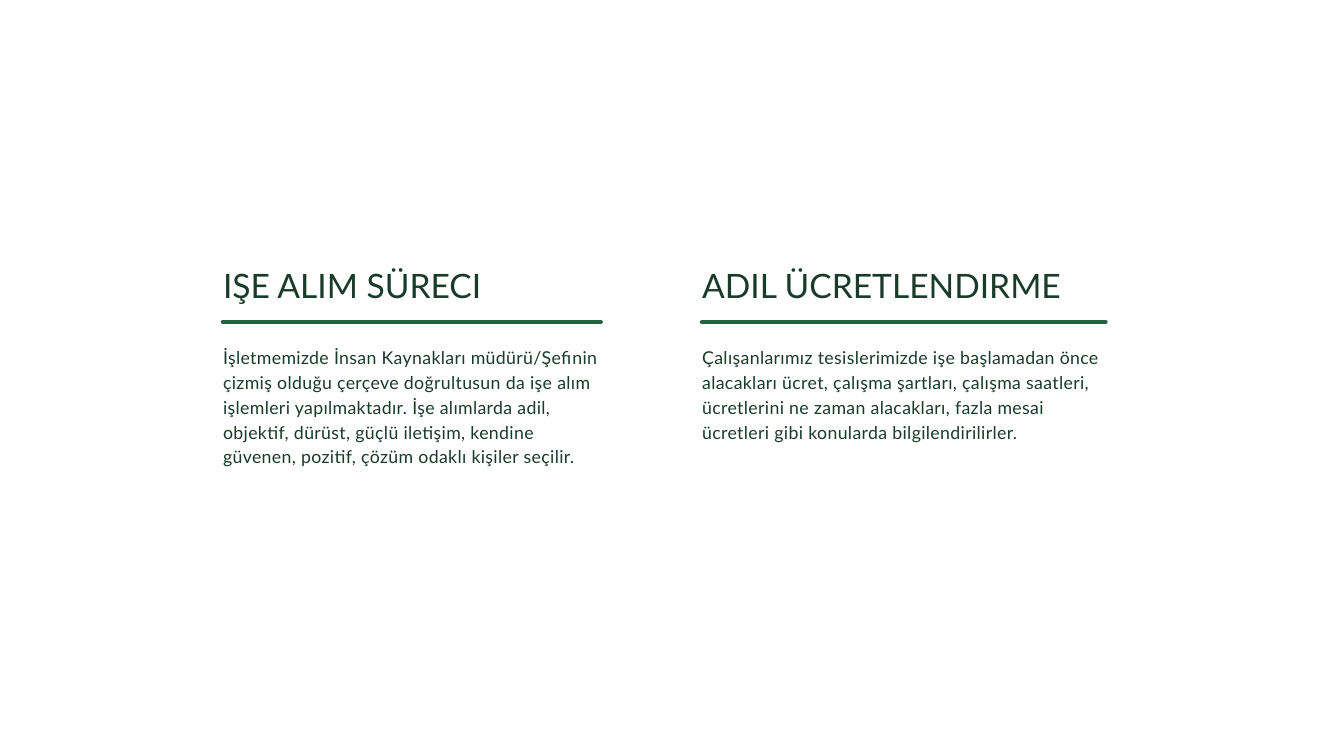
from lxml import etree
from pptx import Presentation
from pptx import util as u
from pptx.dml.color import RGBColor
from pptx.enum import shapes, text
from pptx.oxml import ns

INK = RGBColor(0x1A, 0x3B, 0x29)
GREEN = RGBColor(0x26, 0x60, 0x41)

HEADING_TOP, HEADING_HEIGHT = 9.75, 1.65
RULE_TOP = 12.17
BODY_TOP = 12.98

HEADING = {"size": 36, "line": 50.4, "spacing": 0}
BODY = {"size": 19, "line": 26.6, "spacing": 0.4}

COLUMNS = [
    {
        "left": 8.43, "width": 14.27, "body_height": 7.37,
        "heading": "IŞE ALIM SÜRECI",
        "body": "İşletmemizde İnsan Kaynakları müdürü/Şefinin çizmiş olduğu "
                "çerçeve doğrultusun da işe alım işlemleri yapılmaktadır. "
                "İşe alımlarda adil, objektif, dürüst, güçlü iletişim, kendine "
                "güvenen, pozitif, çözüm odaklı kişiler seçilir.",
    },
    {
        "left": 26.54, "width": 15.24, "body_height": 5.51,
        "heading": "ADIL ÜCRETLENDIRME",
        "body": "Çalışanlarımız tesislerimizde işe başlamadan önce alacakları "
                "ücret, çalışma şartları, çalışma saatleri, ücretlerini ne "
                "zaman alacakları, fazla mesai ücretleri gibi konularda "
                "bilgilendirilirler.",
    },
]


def set_attrs(obj, values):
    for name, value in values.items():
        setattr(obj, name, value)


def fill_placeholder(sp, box, content, style):
    left, top, width, height = (u.Cm(v) for v in box)
    set_attrs(sp, {"left": left, "top": top, "width": width, "height": height})
    tf = sp.text_frame
    set_attrs(tf, {
        "margin_left": 0, "margin_top": 0, "margin_right": 0, "margin_bottom": 0,
        "word_wrap": True,
        "vertical_anchor": text.MSO_ANCHOR.TOP,
        "auto_size": text.MSO_AUTO_SIZE.SHAPE_TO_FIT_TEXT,
    })
    p = tf.paragraphs[0]
    pPr = p._p.get_or_add_pPr()
    pPr.set("marL", "0")
    pPr.set("indent", "0")
    etree.SubElement(pPr, ns.qn("a:buNone"))
    set_attrs(p, {
        "alignment": text.PP_ALIGN.LEFT,
        "line_spacing": u.Pt(style["line"]),
        "space_before": u.Pt(0),
        "space_after": u.Pt(0),
    })
    r = p.add_run()
    r.text = content
    set_attrs(r.font, {"name": "Lato", "size": u.Pt(style["size"]), "bold": False})
    r.font.color.rgb = INK
    if style["spacing"]:
        r._r.get_or_add_rPr().set("spc", str(round(style["spacing"] * 100)))


def add_rule(s, left, width):
    y = u.Cm(RULE_TOP)
    rule = s.shapes.add_connector(
        shapes.MSO_CONNECTOR.STRAIGHT, u.Cm(left), y, u.Cm(left + width), y)
    rule.line.color.rgb = GREEN
    rule.line.width = u.Pt(5)
    spPr = rule._element.spPr
    spPr.find(ns.qn("a:ln")).set("cap", "rnd")
    etree.SubElement(spPr, ns.qn("a:effectLst"))


def add_column(s, heading, body, column):
    left, width = column["left"], column["width"]
    fill_placeholder(heading, (left, HEADING_TOP, width, HEADING_HEIGHT),
                     column["heading"], HEADING)
    fill_placeholder(body, (left, BODY_TOP, width, column["body_height"]),
                     column["body"], BODY)
    add_rule(s, left, width)


def main():
    prs = Presentation()
    set_attrs(prs, {"slide_width": u.Cm(50.8), "slide_height": u.Cm(28.58)})
    s = prs.slides.add_slide(prs.slide_layouts.get_by_name("Comparison"))
    title, *boxes = s.placeholders
    title._element.getparent().remove(title._element)
    for heading, body, column in zip(boxes[::2], boxes[1::2], COLUMNS):
        add_column(s, heading, body, column)
    prs.save("out.pptx")


if __name__ == "__main__":
    main()
